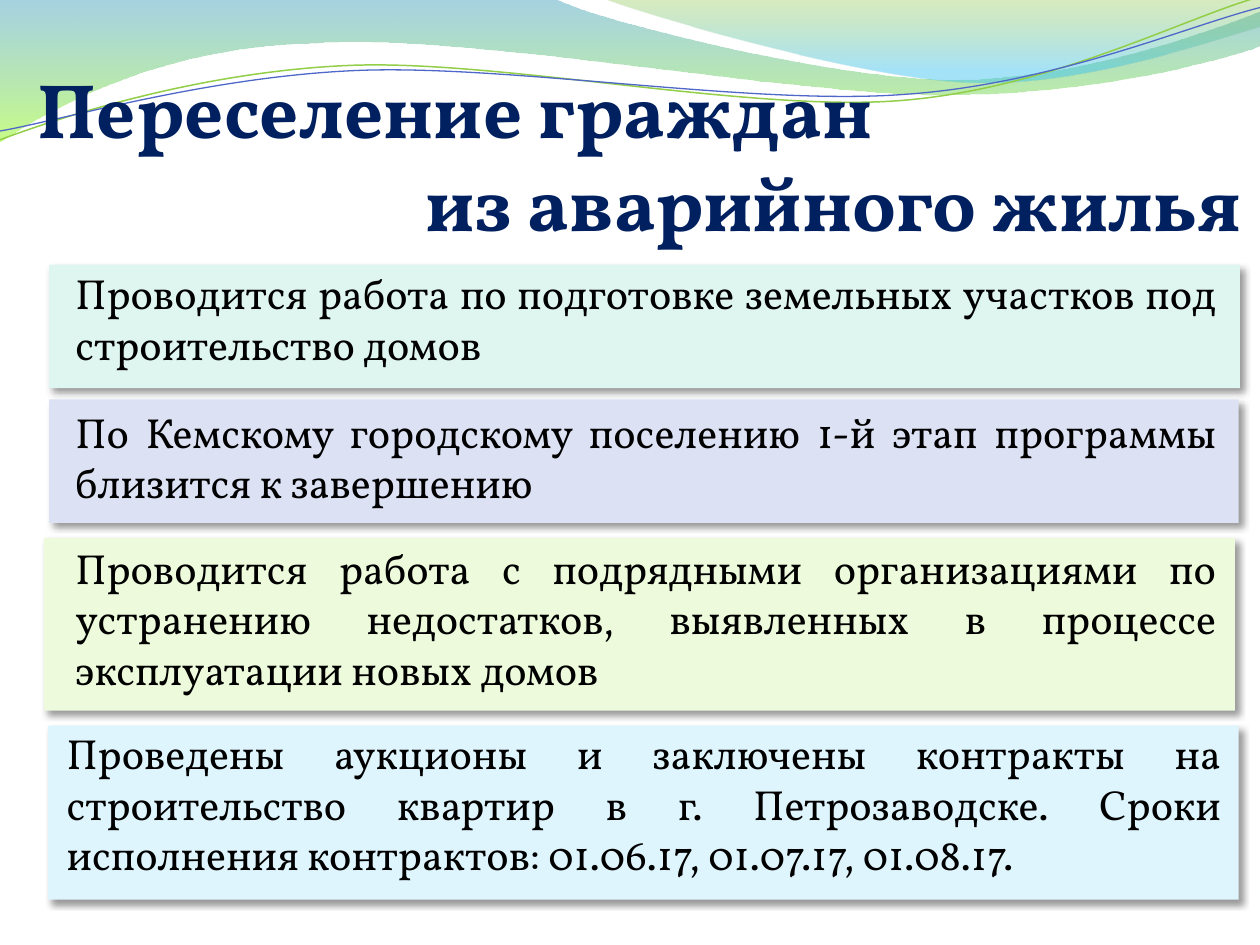
from dataclasses import dataclass

from lxml.etree import SubElement
from pptx import Presentation
from pptx.dml.color import RGBColor as Rgb
from pptx.enum.shapes import MSO_SHAPE as Shape
from pptx.enum.text import MSO_ANCHOR as Anchor
from pptx.enum.text import MSO_AUTO_SIZE as Auto
from pptx.enum.text import PP_ALIGN as Align
from pptx.oxml.ns import qn
from pptx.util import Inches, Pt


@dataclass(frozen=True)
class Theme:
    font: str = "Vollkorn"
    title: str = "002060"
    text: str = "000000"
    shadow: str = "000000"
    title_size: int = 44
    text_size: int = 24
    mint: str = "DFF5EF"
    lilac: str = "DCE1F4"
    lime: str = "EDFBDC"
    sky: str = "DFF5FD"
    green_line: str = "93CE48"
    blue_line: str = "4E67C8"
    # gradient stops: position, colour, opacity in percent
    left_wave: tuple = ((0, "3B9CBF", 45), (1, "9CFA24", 55))
    right_wave: tuple = ((0, "7EBE2C", 30), (0.8, "39C1F1", 45))


@dataclass(frozen=True)
class Box:
    left: float
    top: float
    width: float
    height: float

    def emu(self) -> tuple:
        return tuple(map(Inches, (self.left, self.top, self.width, self.height)))


@dataclass(frozen=True)
class Card:
    fill: str
    panel: Box
    label: Box
    text: str


@dataclass(frozen=True)
class Wave:
    """Pieces hold one point for a line, or two handles and an end for a curve."""
    start: tuple
    pieces: tuple
    stops: tuple = ()
    line: str = ""
    weight: float = 0


THEME = Theme()

WAVES = (
    Wave((0, 0), (
        (4.4, -0.01),
        (4.76, 0.17, 6.64, 0.63, 7.58, 0.63),
        (8.53, 0.63, 9.58, 0.26, 10, 0.09),
        (10.01, 0.36),
        (9.83, 0.44, 8.7, 0.76, 7.46, 0.75),
        (6.22, 0.75, 3.82, 0.28, 2.57, 0.34),
        (1.29, 0.36, 0.46, 0.83, -0.01, 1.13),
        (0, 0)), stops=THEME.left_wave),
    Wave((4.79, -0.01), (
        (5.09, 0.11, 6.82, 0.62, 7.69, 0.65),
        (8.56, 0.69, 9.61, 0.32, 10, 0.21),
        (10, 0),
        (4.79, -0.01)), stops=THEME.right_wave),
    Wave((0, 1.11), (
        (0.48, 0.93, 1.58, 0.57, 2.77, 0.52),
        (3.95, 0.47, 5.93, 0.89, 7.13, 0.8),
        (8.33, 0.71, 9.38, 0.15, 9.98, -0.02)),
        line=THEME.green_line, weight=0.85),
    Wave((0, 1.04), (
        (0.47, 0.96, 1.64, 0.61, 2.83, 0.56),
        (4.03, 0.51, 5.97, 0.84, 7.17, 0.75),
        (8.36, 0.67, 9.41, 0.21, 10, 0.06)),
        line=THEME.blue_line, weight=0.75),
)

CARDS = (
    Card(THEME.mint, Box(0.39, 2.1, 9.45, 0.98), Box(0.5, 2.07, 9.25, 0.91),
         "Проводится работа по подготовке земельных участков под "
         "строительство домов"),
    Card(THEME.lilac, Box(0.39, 3.17, 9.44, 0.98), Box(0.5, 3.17, 9.25, 0.91),
         "По Кемскому городскому поселению 1-й этап программы "
         "близится к завершению"),
    Card(THEME.lime, Box(0.35, 4.27, 9.45, 1.37), Box(0.5, 4.25, 9.25, 1.31),
         "Проводится работа с подрядными организациями по устранению "
         "недостатков, выявленных в процессе эксплуатации новых домов"),
    Card(THEME.sky, Box(0.38, 5.76, 9.45, 1.38), Box(0.43, 5.72, 9.36, 1.31),
         "Проведены аукционы и заключены контракты на строительство квартир "
         "в г. Петрозаводске. Сроки исполнения контрактов: "
         "01.06.17, 01.07.17, 01.08.17."),
)

TITLE = Box(0.2, 0.44, 9.76, 1.58)
TITLE_LINES = (("Переселение граждан", Align.LEFT),
               ("из аварийного жилья", Align.RIGHT))


def set_alpha(color, percent: int) -> None:
    SubElement(color, qn("a:alpha")).set("val", str(percent * 1000))


def bend(shape, pieces: tuple) -> None:
    """Join the three line steps of each curved piece into one Bézier step."""
    track = next(shape.element.iter(qn("a:path")))
    steps = iter(track.findall(qn("a:lnTo")))
    for piece in pieces:
        group = [next(steps) for _ in range(len(piece) // 2)]
        if len(group) == 1:
            continue
        curve = SubElement(track, qn("a:cubicBezTo"))
        group[0].addprevious(curve)
        for step in group:
            curve.append(step[0])
            track.remove(step)


def draw_wave(slide, wave: Wave) -> None:
    pen = slide.shapes.build_freeform(*map(Inches, wave.start))
    points = [(Inches(x), Inches(y)) for piece in wave.pieces
              for x, y in zip(piece[::2], piece[1::2])]
    pen.add_line_segments(points, close=bool(wave.stops))
    shape = pen.convert_to_shape()
    bend(shape, wave.pieces)
    shape.shadow.inherit = False
    if wave.line:
        shape.fill.background()
        shape.line.color.rgb = Rgb.from_string(wave.line)
        shape.line.width = Pt(wave.weight)
        return
    shape.line.fill.background()
    shape.fill.gradient()
    shape.fill.gradient_angle = 270
    for stop, (pos, color, _) in zip(shape.fill.gradient_stops, wave.stops):
        stop.position = pos
        stop.color.rgb = Rgb.from_string(color)
    colors = list(shape.element.spPr.iter(qn("a:srgbClr")))
    for color, (_, _, alpha) in zip(colors, wave.stops):
        set_alpha(color, alpha)


def add_shadow(shape) -> None:
    shape.shadow.inherit = False
    effects = shape.element.spPr.find(qn("a:effectLst"))
    outer = SubElement(effects, qn("a:outerShdw"), blurRad=str(Pt(4)),
                       dist=str(Pt(3)), dir=str(45 * 60000),
                       algn="tl", rotWithShape="0")
    set_alpha(SubElement(outer, qn("a:srgbClr"), val=THEME.shadow), 40)


def add_text(slide, box: Box, lines: tuple, size: int, color: str,
             bold: bool = False, anchor: Anchor = Anchor.TOP) -> None:
    frame = slide.shapes.add_textbox(*box.emu()).text_frame
    frame.word_wrap = True
    frame.auto_size = Auto.SHAPE_TO_FIT_TEXT
    frame.vertical_anchor = anchor
    for index, (text, align) in enumerate(lines):
        para = frame.add_paragraph() if index else frame.paragraphs[0]
        para.alignment = align
        run = para.add_run()
        run.text = text
        run.font.name = THEME.font
        run.font.size = Pt(size)
        run.font.bold = bold
        run.font.color.rgb = Rgb.from_string(color)


def draw_card(slide, card: Card) -> None:
    panel = slide.shapes.add_shape(Shape.RECTANGLE, *card.panel.emu())
    panel.fill.solid()
    panel.fill.fore_color.rgb = Rgb.from_string(card.fill)
    panel.line.fill.background()
    add_shadow(panel)
    add_text(slide, card.label, ((card.text, Align.JUSTIFY),),
             THEME.text_size, THEME.text, anchor=Anchor.MIDDLE)


def main() -> None:
    deck = Presentation()
    deck.slide_width, deck.slide_height = Inches(10), Inches(7.5)
    slide = deck.slides.add_slide(deck.slide_layouts[6])
    for wave in WAVES:
        draw_wave(slide, wave)
    add_text(slide, TITLE, TITLE_LINES, THEME.title_size, THEME.title, bold=True)
    for card in CARDS:
        draw_card(slide, card)
    deck.save("out.pptx")


if __name__ == "__main__":
    main()
